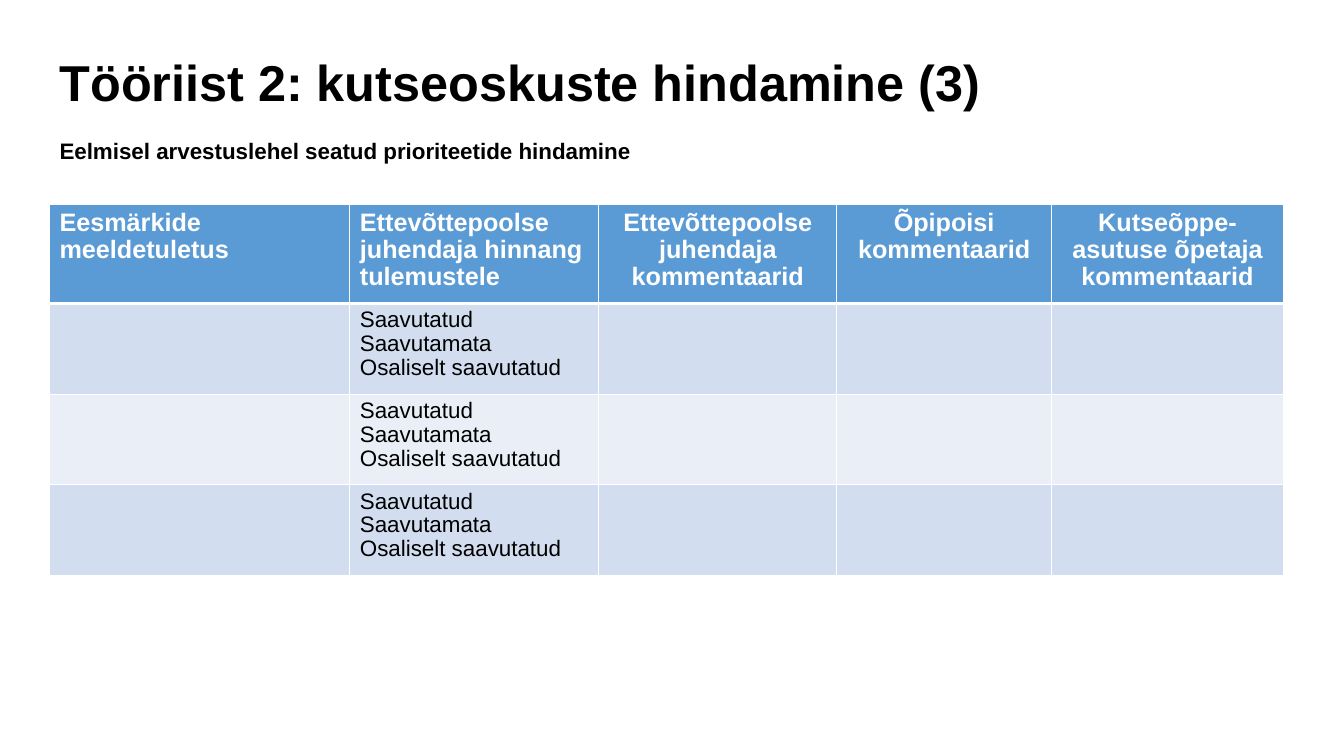
from lxml.etree import SubElement as Sub
from pptx import Presentation
from pptx.dml.color import RGBColor as Rgb
from pptx.enum.text import MSO_ANCHOR as Anchor, MSO_AUTO_SIZE as Fit, PP_ALIGN as Align
from pptx.oxml.ns import qn
from pptx.util import Inches, Pt

HUES = {"ink": "000000", "line": "FFFFFF", "head": "5B9BD5", "odd": "D2DEEF", "even": "EAEFF7"}
HEADS = [
    ("Eesmärkide meeldetuletus", Align.LEFT),
    ("Ettevõttepoolse juhendaja hinnang tulemustele", Align.LEFT),
    ("Ettevõttepoolse juhendaja kommentaarid", Align.CENTER),
    ("Õpipoisi kommentaarid", Align.CENTER),
    ("Kutseõppe-asutuse õpetaja kommentaarid", Align.CENTER),
]
GRADES = ["Saavutatud", "Saavutamata", "Osaliselt saavutatud"]
WIDTHS = [2.98, 2.47, 2.36, 2.13, 2.3]
HEIGHTS = [0.98, 0.9, 0.9, 0.9]


class Page:
    def __init__(self, deck):
        self.font = "Arial"
        self.slide = deck.slides.add_slide(deck.slide_layouts[5])

    def text(self, para, words, size, hue="ink", bold=False, align=Align.LEFT):
        para.alignment = align
        run = para.add_run()
        run.text = words
        font = run.font
        font.name, font.size, font.bold = self.font, Pt(size), bold
        font.color.rgb = Rgb.from_string(HUES[hue])

    def title(self, words, note, left, top, width, height):
        box = self.slide.shapes.title
        box.left, box.top = Inches(left), Inches(top)
        box.width, box.height = Inches(width), Inches(height)
        frame = box.text_frame
        frame.word_wrap = True
        frame.auto_size = Fit.NONE
        frame.vertical_anchor = Anchor.TOP
        self.text(frame.paragraphs[0], words, 36, bold=True)
        para = frame.add_paragraph()
        para.space_before = Pt(18)
        self.text(para, note, 16, bold=True)

    def edge(self, cell, side, width):
        line = Sub(cell._tc.get_or_add_tcPr(), qn("a:" + side), w=str(Pt(width)))
        fill = Sub(line, qn("a:solidFill"))
        Sub(fill, qn("a:srgbClr"), val=HUES["line"])

    def cell(self, cell, row, hue):
        for side in ("lnL", "lnR", "lnT", "lnB"):
            thick = (row, side) in ((0, "lnB"), (1, "lnT"))
            self.edge(cell, side, 3 if thick else 1)
        cell.fill.solid()
        cell.fill.fore_color.rgb = Rgb.from_string(HUES[hue])

    def table(self, left, top):
        shape = self.slide.shapes.add_table(
            len(HEIGHTS), len(WIDTHS), Inches(left), Inches(top),
            Inches(sum(WIDTHS)), Inches(sum(HEIGHTS)))
        grid = shape.table
        for col, width in zip(grid.columns, WIDTHS):
            col.width = Inches(width)
        for num, height in enumerate(HEIGHTS):
            grid.rows[num].height = Inches(height)
            hue = "head" if num == 0 else "odd" if num % 2 else "even"
            for col in range(len(WIDTHS)):
                self.cell(grid.cell(num, col), num, hue)
        for col, (words, align) in enumerate(HEADS):
            para = grid.cell(0, col).text_frame.paragraphs[0]
            para.line_spacing = 0.96
            self.text(para, words, 18, "line", True, align)
        for num in range(1, len(HEIGHTS)):
            frame = grid.cell(num, 1).text_frame
            for pos, grade in enumerate(GRADES):
                para = frame.add_paragraph() if pos else frame.paragraphs[0]
                para.line_spacing = 0.96
                self.text(para, grade, 16)


def main():
    deck = Presentation()
    deck.slide_width, deck.slide_height = Inches(13.33), Inches(7.5)
    page = Page(deck)
    page.title("Tööriist 2: kutseoskuste hindamine (3)",
               "Eelmisel arvestuslehel seatud prioriteetide hindamine",
               0.49, 0.46, 10.72, 1.25)
    page.table(0.49, 2.03)
    deck.save("out.pptx")


if __name__ == "__main__":
    main()
